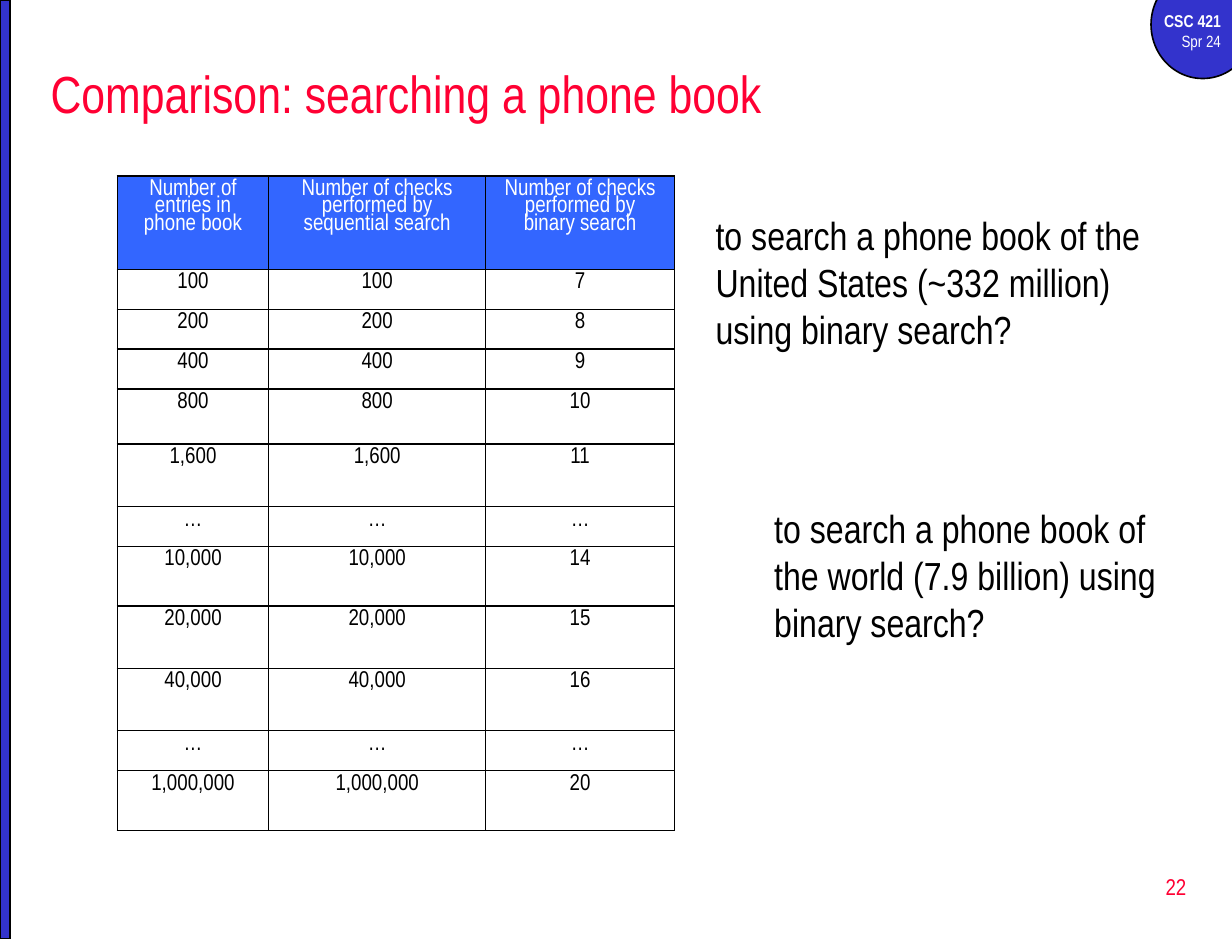
from lxml import etree
from pptx import Presentation
from pptx.dml.color import RGBColor
from pptx.enum import shapes, text
from pptx.oxml import ns
from pptx.util import Pt

FONT = "Arial Narrow"
BLACK = RGBColor(0x00, 0x00, 0x00)
WHITE = RGBColor(0xFF, 0xFF, 0xFF)
RED = RGBColor(0xFF, 0x00, 0x33)
INDIGO = RGBColor(0x33, 0x33, 0xCC)
HEADER_BLUE = RGBColor(0x33, 0x66, 0xFF)

LEFT, CENTER, RIGHT = text.PP_ALIGN.LEFT, text.PP_ALIGN.CENTER, text.PP_ALIGN.RIGHT
TOP, MIDDLE = text.MSO_ANCHOR.TOP, text.MSO_ANCHOR.MIDDLE

HEADERS = (
    "Number of entries in phone book",
    "Number of checks performed by sequential search",
    "Number of checks performed by binary search",
)
# Entries (equal to the sequential checks), binary checks, row height
SEARCHES = (
    ("100", "7", 24.5),
    ("200", "8", 24.5),
    ("400", "9", 24.5),
    ("800", "10", 33.8),
    ("1,600", "11", 38.2),
    ("…", "…", 24.5),
    ("10,000", "14", 36.7),
    ("20,000", "15", 38.2),
    ("40,000", "16", 38.2),
    ("…", "…", 24.5),
    ("1,000,000", "20", 36.7),
)
HEADER_HEIGHT = 57.2
COLUMN_WIDTHS = (92.9, 133.2, 115.9)


def format_paragraph(paragraph, size, color, align=LEFT, bold=False):
    paragraph.alignment = align
    for run in paragraph.runs:
        run.font.name = FONT
        run.font.size = Pt(size)
        run.font.bold = bold
        run.font.color.rgb = color


def add_text(slide, box, content, size, color, align=LEFT, anchor=TOP):
    """Add a wrapped text box, one paragraph per line of content."""
    frame = slide.shapes.add_textbox(*map(Pt, box)).text_frame
    frame.word_wrap = True
    frame.vertical_anchor = anchor
    frame.text = content
    for paragraph in frame.paragraphs:
        format_paragraph(paragraph, size, color, align)
    return frame


def add_outlined_shape(slide, kind, box):
    shape = slide.shapes.add_shape(kind, *map(Pt, box))
    shape.shadow.inherit = False
    shape.fill.solid()
    shape.fill.fore_color.rgb = INDIGO
    shape.line.color.rgb = BLACK
    shape.line.width = Pt(1)


def add_course_badge(slide, box):
    left, top, width, height = box
    add_outlined_shape(slide, shapes.MSO_SHAPE.OVAL, box)
    label_box = (left - 10, top + 21, width - 3.5, height - 33)
    frame = add_text(slide, label_box, "CSC 421\nSpr 24", 10, WHITE, RIGHT)
    format_paragraph(frame.paragraphs[0], 10.5, WHITE, RIGHT, bold=True)


def add_borders(cell):
    properties = cell._tc.get_or_add_tcPr()
    for index, side in enumerate(("a:lnL", "a:lnR", "a:lnT", "a:lnB")):
        line = etree.Element(ns.qn(side), w=str(Pt(1)))
        fill = etree.SubElement(line, ns.qn("a:solidFill"))
        etree.SubElement(fill, ns.qn("a:srgbClr"), val=str(BLACK))
        properties.insert(index, line)


def add_search_table(slide, left, top):
    rows = [HEADERS] + [(entries, entries, checks) for entries, checks, _ in SEARCHES]
    heights = [HEADER_HEIGHT] + [height for _, _, height in SEARCHES]
    box = (left, top, sum(COLUMN_WIDTHS), sum(heights))
    table = slide.shapes.add_table(len(rows), len(HEADERS), *map(Pt, box)).table
    table.first_row = table.horz_banding = False
    for column, width in zip(table.columns, COLUMN_WIDTHS):
        column.width = Pt(width)
    for row_index, (values, height) in enumerate(zip(rows, heights)):
        table.rows[row_index].height = Pt(height)
        for column_index, value in enumerate(values):
            cell = table.cell(row_index, column_index)
            cell.text = value
            paragraph = cell.text_frame.paragraphs[0]
            paragraph.line_spacing = 0.8
            if row_index == 0:
                cell.fill.solid()
                cell.fill.fore_color.rgb = HEADER_BLUE
            else:
                cell.fill.background()
            format_paragraph(paragraph, 14, BLACK if row_index else WHITE, CENTER)
            add_borders(cell)


def add_questions(slide, box):
    content = (
        "to search a phone book of the United States (~332 million) using binary search?\n"
        "to search a phone book of the world (7.9 billion) using binary search?"
    )
    second = add_text(slide, box, content, 24, BLACK).paragraphs[1]
    second.space_before = Pt(93.6)
    second._p.get_or_add_pPr().set("marL", str(Pt(36)))


def main():
    presentation = Presentation()
    presentation.slide_width, presentation.slide_height = Pt(756), Pt(576)
    slide = presentation.slides.add_slide(presentation.slide_layouts[6])
    add_course_badge(slide, (706.3, -18, 63.4, 66.2))
    add_outlined_shape(slide, shapes.MSO_SHAPE.RECTANGLE, (0, 0, 6, 576))
    add_text(slide, (577.4, 525, 157.7, 38), "22", 14, RED, RIGHT, MIDDLE)
    add_text(slide, (24, 30, 714, 54), "Comparison: searching a phone book", 32, RED,
             anchor=MIDDLE)
    add_search_table(slide, 72, 108)
    add_questions(slide, (432, 126, 300, 327))
    presentation.save("out.pptx")


if __name__ == "__main__":
    main()
